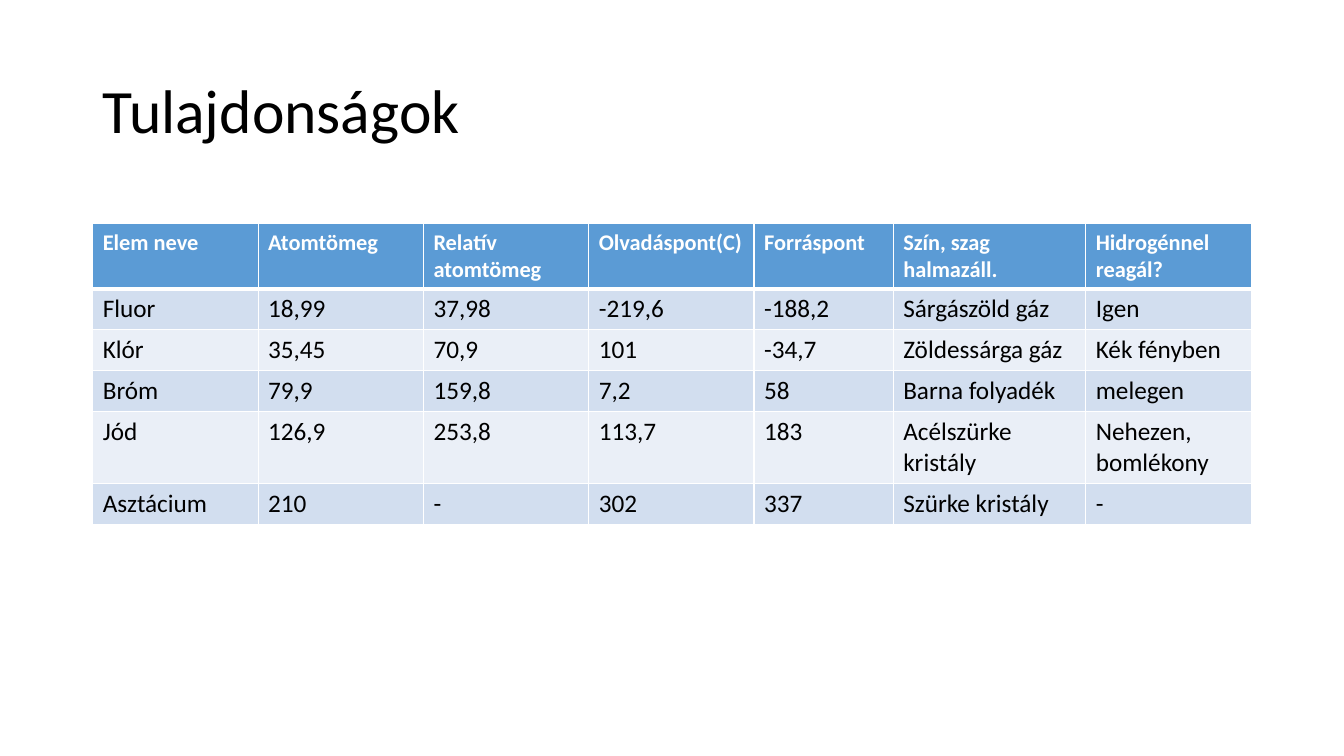
import pptx
import pptx.dml.color
import pptx.enum.text
import pptx.oxml
import pptx.oxml.ns
import pptx.util
from pptx.util import Inches

FONT = "Calibri"
WHITE, BLACK = "FFFFFF", "000000"
HEADER_FILL = "5B9BD5"
BAND_FILLS = ["D2DEEF", "EAEFF7"]
COLUMN_WIDTHS = [1.64, 1.64, 1.64, 1.64, 1.38, 1.91, 1.64]
ROW_HEIGHTS = [0.63, 0.4, 0.4, 0.4, 0.72, 0.4]
ROWS = [
    ["Elem neve", "Atomtömeg", "Relatív atomtömeg", "Olvadáspont(C)",
     "Forráspont", "Szín, szag halmazáll.", "Hidrogénnel reagál?"],
    ["Fluor", "18,99", "37,98", "-219,6", "-188,2", "Sárgászöld gáz", "Igen"],
    ["Klór", "35,45", "70,9", "101", "-34,7", "Zöldessárga gáz", "Kék fényben"],
    ["Bróm", "79,9", "159,8", "7,2", "58", "Barna folyadék", "melegen"],
    ["Jód", "126,9", "253,8", "113,7", "183", "Acélszürke kristály",
     "Nehezen, bomlékony"],
    ["Asztácium", "210", "-", "302", "337", "Szürke kristály", "-"],
]


def set_color(color_format, value):
    color_format.rgb = pptx.dml.color.RGBColor.from_string(value)


def add_run(p, text, size, color, bold=False):
    r = p.add_run()
    r.text = text
    r.font.name = FONT
    r.font.size = pptx.util.Pt(size)
    r.font.bold = bold
    set_color(r.font.color, color)


def add_title(s, text):
    sp = s.shapes.title
    sp.left, sp.top = Inches(0.92), Inches(0.4)
    sp.width, sp.height = Inches(11.5), Inches(1.45)
    tf = sp.text_frame
    tf.word_wrap = True
    tf.auto_size = pptx.enum.text.MSO_AUTO_SIZE.NONE
    tf.vertical_anchor = pptx.enum.text.MSO_ANCHOR.MIDDLE
    p = tf.paragraphs[0]
    p.alignment = pptx.enum.text.PP_ALIGN.LEFT
    p.line_spacing = 0.9
    add_run(p, text, 44, BLACK)


def add_borders(cell, top, bottom):
    tcPr = cell._tc.get_or_add_tcPr()
    for side, points in (("L", 1), ("R", 1), ("T", top), ("B", bottom)):
        tcPr.append(pptx.oxml.parse_xml(
            f'<a:ln{side} {pptx.oxml.ns.nsdecls("a")} w="{pptx.util.Pt(points)}">'
            f'<a:solidFill><a:srgbClr val="{WHITE}"/></a:solidFill></a:ln{side}>'))


def fill_cell(cell, text, row):
    header = row == 0
    add_borders(cell, 3 if row == 1 else 1, 3 if header else 1)
    cell.fill.solid()
    set_color(cell.fill.fore_color,
              HEADER_FILL if header else BAND_FILLS[(row - 1) % 2])
    add_run(cell.text_frame.paragraphs[0], text, 16 if header else 18,
            WHITE if header else BLACK, header)


def add_property_table(s):
    frame = s.shapes.add_table(len(ROWS), len(COLUMN_WIDTHS), Inches(0.92),
                               Inches(2.22), Inches(sum(COLUMN_WIDTHS)),
                               Inches(sum(ROW_HEIGHTS)))
    table = frame.table
    for column, width in zip(table.columns, COLUMN_WIDTHS):
        column.width = Inches(width)
    for i, (height, texts) in enumerate(zip(ROW_HEIGHTS, ROWS)):
        table.rows[i].height = Inches(height)
        for j, text in enumerate(texts):
            fill_cell(table.cell(i, j), text, i)


def main():
    prs = pptx.Presentation()
    prs.slide_width, prs.slide_height = Inches(13.33), Inches(7.5)
    s = prs.slides.add_slide(prs.slide_layouts.get_by_name("Title Only"))
    add_title(s, "Tulajdonságok")
    add_property_table(s)
    prs.save("out.pptx")


if __name__ == "__main__":
    main()
